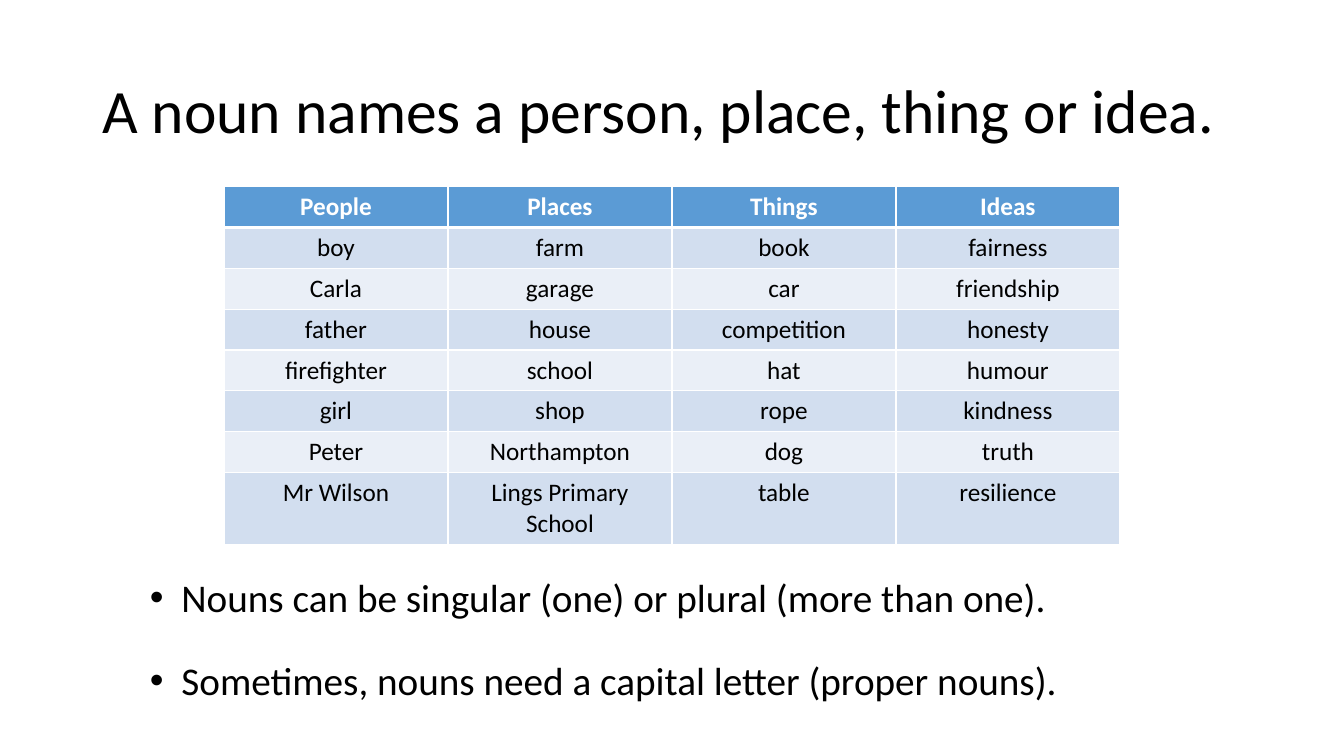
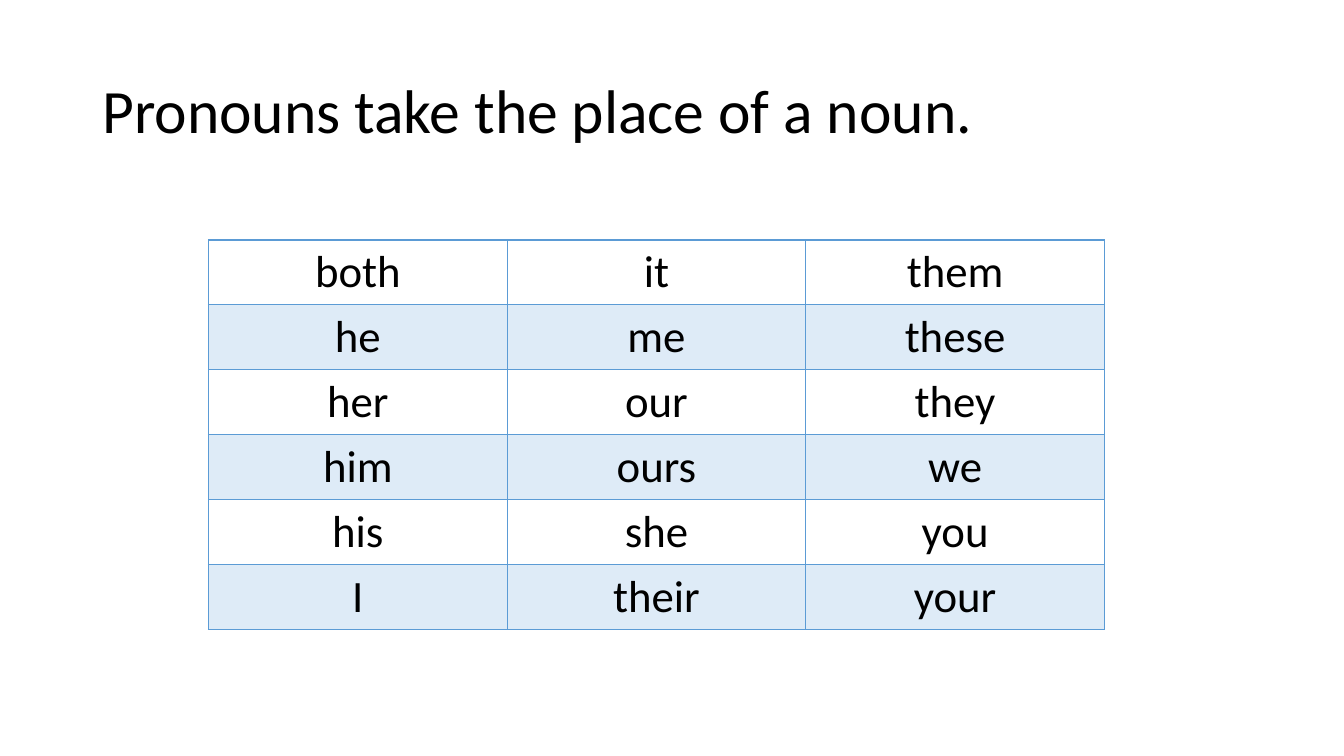
from lxml.etree import SubElement
from pptx import Presentation
from pptx.dml.color import RGBColor as RGB
from pptx.enum.text import MSO_ANCHOR as Anchor, PP_ALIGN as Align
from pptx.oxml.ns import qn
from pptx.util import Pt

# Shared style
FONT = "Calibri"
BLACK = RGB(0x00, 0x00, 0x00)
WHITE = RGB(0xFF, 0xFF, 0xFF)
BLUE = RGB(0x5B, 0x9B, 0xD5)
MID = RGB(0xD2, 0xDE, 0xEF)
LIGHT = RGB(0xEA, 0xEF, 0xF7)
PALE = RGB(0xDE, 0xEB, 0xF7)

# Content
NOUNS = [
    ("People", "Places", "Things", "Ideas"),
    ("boy", "farm", "book", "fairness"),
    ("Carla", "garage", "car", "friendship"),
    ("father", "house", "competition", "honesty"),
    ("firefighter", "school", "hat", "humour"),
    ("girl", "shop", "rope", "kindness"),
    ("Peter", "Northampton", "dog", "truth"),
    ("Mr Wilson", "Lings Primary School", "table", "resilience"),
]
PRONOUNS = [
    ("both", "it", "them"),
    ("he", "me", "these"),
    ("her", "our", "they"),
    ("him", "ours", "we"),
    ("his", "she", "you"),
    ("I", "their", "your"),
]
FACTS = [
    "Nouns can be singular (one) or plural (more than one).",
    "Sometimes, nouns need a capital letter (proper nouns).",
]


def add_run(para, text, size, color=BLACK, bold=False):
    run = para.add_run()
    run.text = text
    font = run.font
    font.name, font.size, font.bold = FONT, Pt(size), bold
    font.color.rgb = color


def add_text(slide, text, box, size, anchor=Anchor.TOP):
    frame = slide.shapes.add_textbox(*map(Pt, box)).text_frame
    frame.word_wrap = True
    frame.vertical_anchor = anchor
    para = frame.paragraphs[0]
    add_run(para, text, size)
    return para


def add_title(slide, text):
    para = add_text(slide, text, (66, 28.75, 828, 104.4), 44, Anchor.MIDDLE)
    para.line_spacing = 0.9


def add_bullet(slide, text, top):
    props = add_text(slide, text, (100, top, 672.4, 41.2), 28)._p.get_or_add_pPr()
    props.set("marL", str(Pt(22.5)))
    props.set("indent", str(Pt(-22.5)))
    SubElement(props, qn("a:buFont"), typeface="Arial")
    SubElement(props, qn("a:buChar"), char="•")


def add_edge(cell, side, color, width):
    line = SubElement(cell._tc.get_or_add_tcPr(), qn("a:ln" + side), w=str(Pt(width)))
    fill = SubElement(line, qn("a:solidFill"))
    SubElement(fill, qn("a:srgbClr"), val=str(color))


def add_grid(slide, data, left, top, heights, size, edge, bands, head=None):
    """Bands alternate down the rows; head is the fill of a heading row."""
    shape = slide.shapes.add_table(
        len(data), len(data[0]), Pt(left), Pt(top), Pt(640), Pt(sum(heights)))
    table = shape.table
    table.first_row = head is not None
    table.horz_banding = False
    for row, height in zip(table.rows, heights):
        row.height = Pt(height)
    for r, words in enumerate(data):
        title = head is not None and r == 0
        color = head if title else bands[r % 2]
        for c, word in enumerate(words):
            cell = table.cell(r, c)
            # The rule under a heading row is thicker
            above = 3 if head is not None and r == 1 else 1
            below = 3 if title else 1
            for side, width in zip("LRTB", (1, 1, above, below)):
                add_edge(cell, side, edge, width)
            cell.fill.solid()
            cell.fill.fore_color.rgb = color
            para = cell.text_frame.paragraphs[0]
            para.alignment = Align.CENTER
            add_run(para, word, size, WHITE if title else BLACK, title)


def main():
    deck = Presentation()
    deck.slide_width, deck.slide_height = Pt(960), Pt(540)
    blank = deck.slide_layouts[6]

    # Nouns
    slide = deck.slides.add_slide(blank)
    add_title(slide, "A noun names a person, place, thing or idea.")
    add_grid(slide, NOUNS, 160, 133.2, [29.2] * 7 + [51.2], 18,
             WHITE, (LIGHT, MID), BLUE)
    for i, fact in enumerate(FACTS):
        add_bullet(slide, fact, 406 + 59.2 * i)

    # Pronouns
    slide = deck.slides.add_slide(blank)
    add_title(slide, "Pronouns take the place of a noun.")
    add_grid(slide, PRONOUNS, 149, 171.4, [46.4] * 6, 32, BLUE, (WHITE, PALE))

    deck.save("out.pptx")


if __name__ == "__main__":
    main()
